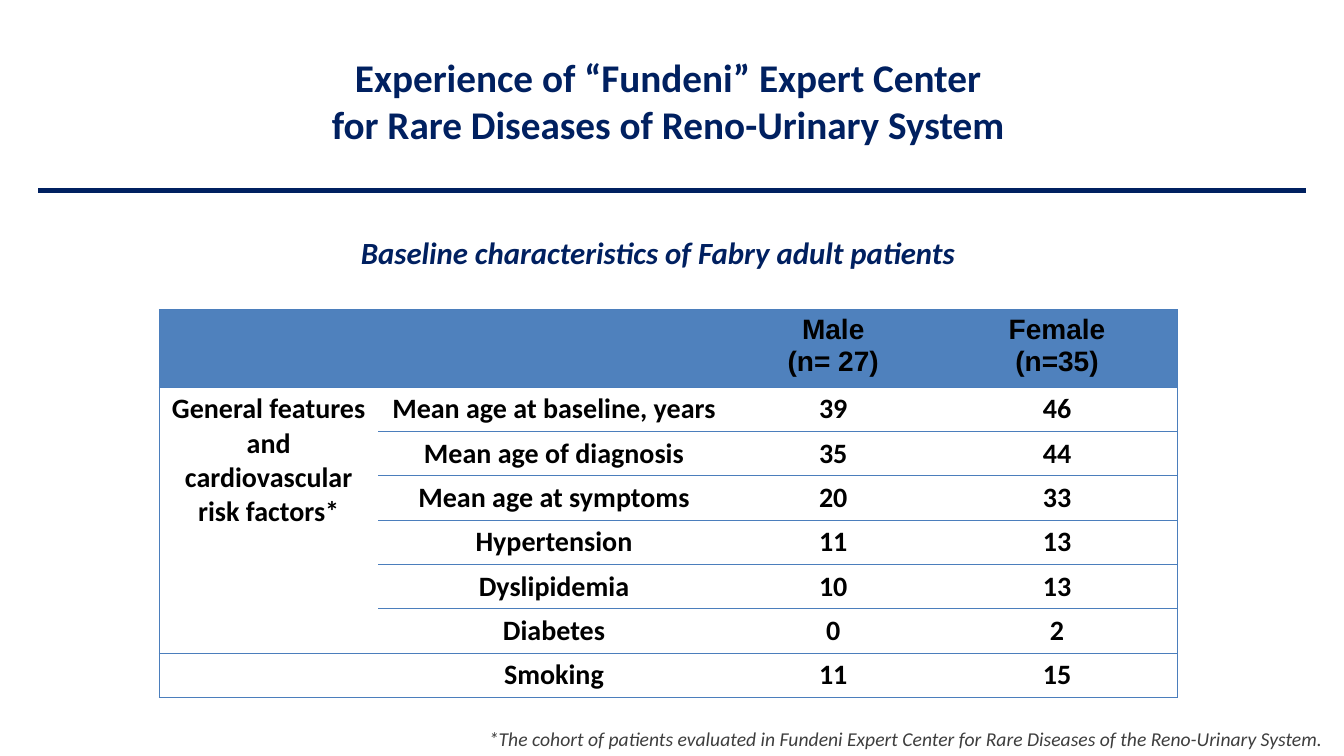
from lxml.etree import SubElement
from pptx import Presentation
from pptx.dml.color import RGBColor
from pptx.enum.shapes import MSO_CONNECTOR
from pptx.enum.text import MSO_ANCHOR, PP_ALIGN
from pptx.oxml.ns import qn
from pptx.util import Inches, Pt

COLORS = {"navy": "002060", "header": "4F81BD", "border": "4B7EBC",
          "black": "000000", "gray": "3E3E3E"}
SLIDE = (13.33, 7.5)
RULE = (0.38, 1.89, 12.95)

TEXTS = [
    dict(lines=["Experience of “Fundeni” Expert Center",
                "for Rare Diseases of Reno-Urinary System"],
         box=(1.65, 0.15, 9.95, 1.69), size=28, color="navy", bold=True),
    dict(lines=["Baseline characteristics of Fabry adult patients"],
         box=(1.58, 2, 9.89, 1), size=22, color="navy", bold=True, italic=True),
    dict(lines=["*The cohort of patients evaluated in Fundeni Expert Center "
                "for Rare Diseases of the Reno-Urinary System."],
         box=(4.75, 7.16, 8.58, 0.34), size=14, color="gray", italic=True,
         align=PP_ALIGN.LEFT, anchor=MSO_ANCHOR.TOP),
]

GROUP = "General features\nand cardiovascular risk factors*"
ROWS = [
    ("", "", "Male\n(n= 27)", "Female\n(n=35)"),
    (GROUP, "Mean age at baseline, years", "39", "46"),
    ("", "Mean age of diagnosis", "35", "44"),
    ("", "Mean age at symptoms", "20", "33"),
    ("", "Hypertension", "11", "13"),
    ("", "Dyslipidemia", "10", "13"),
    ("", "Diabetes", "0", "2"),
    ("", "Smoking", "11", "15"),
]
TABLE_AT = (1.58, 3.07)
COLUMNS = (2.17, 3.49, 2.05, 2.39)
HEADER_HEIGHT, ROW_HEIGHT = 0.77, 0.44
GROUP_FIRST, GROUP_LAST = 1, 6


def rgb(name):
    return RGBColor.from_string(COLORS[name])


def write(tf, lines, size, color, bold=False, italic=False,
          align=PP_ALIGN.CENTER, font="Calibri"):
    tf.text = "\n".join(lines)
    for p in tf.paragraphs:
        p.alignment = align
        for r in p.runs:
            r.font.name, r.font.size = font, Pt(size)
            r.font.bold, r.font.italic = bold, italic
            r.font.color.rgb = rgb(color)


def add_text(s, lines, box, anchor=MSO_ANCHOR.MIDDLE, **style):
    tf = s.shapes.add_textbox(*map(Inches, box)).text_frame
    tf.word_wrap = True
    tf.vertical_anchor = anchor
    write(tf, lines, **style)


def add_rule(s):
    left, y, right = map(Inches, RULE)
    line = s.shapes.add_connector(MSO_CONNECTOR.STRAIGHT, left, y, right, y)
    line.line.color.rgb = rgb("navy")
    line.line.width = Pt(3.5)
    SubElement(line._element.spPr, qn("a:effectLst"))


def set_borders(cell, sides):
    tcPr = cell._tc.get_or_add_tcPr()
    for side, shown in sides.items():
        ln = SubElement(tcPr, qn("a:ln" + side), w=str(Pt(0.75)))
        if shown:
            fill = SubElement(ln, qn("a:solidFill"))
            SubElement(fill, qn("a:srgbClr"), val=COLORS["border"])
        else:
            SubElement(ln, qn("a:noFill"))


def add_patient_table(s):
    heights = [HEADER_HEIGHT] + [ROW_HEIGHT] * (len(ROWS) - 1)
    size = (sum(COLUMNS), sum(heights))
    table = s.shapes.add_table(len(ROWS), len(COLUMNS),
                               *map(Inches, TABLE_AT + size)).table
    for column, width in zip(table.columns, COLUMNS):
        column.width = Inches(width)
    for row, height in zip(table.rows, heights):
        row.height = Inches(height)
    table.cell(GROUP_FIRST, 0).merge(table.cell(GROUP_LAST, 0))
    for i, row in enumerate(ROWS):
        for j, text in enumerate(row):
            cell = table.cell(i, j)
            inside = j == 0 and GROUP_FIRST <= i <= GROUP_LAST
            set_borders(cell, {
                "L": j == 0,
                "R": j == len(COLUMNS) - 1,
                "T": not inside or i == GROUP_FIRST,
                "B": not inside or i in (GROUP_FIRST, GROUP_LAST),
            })
            if i == 0:
                cell.fill.solid()
                cell.fill.fore_color.rgb = rgb("header")
            else:
                cell.fill.background()
            if text:
                write(cell.text_frame, text.split("\n"), 20, "black", bold=True,
                      font="Calibri" if i else "Arial")


def main():
    prs = Presentation()
    prs.slide_width, prs.slide_height = map(Inches, SLIDE)
    s = prs.slides.add_slide(prs.slide_layouts[6])
    add_rule(s)
    for text in TEXTS:
        add_text(s, **text)
    add_patient_table(s)
    prs.save("out.pptx")


if __name__ == "__main__":
    main()
